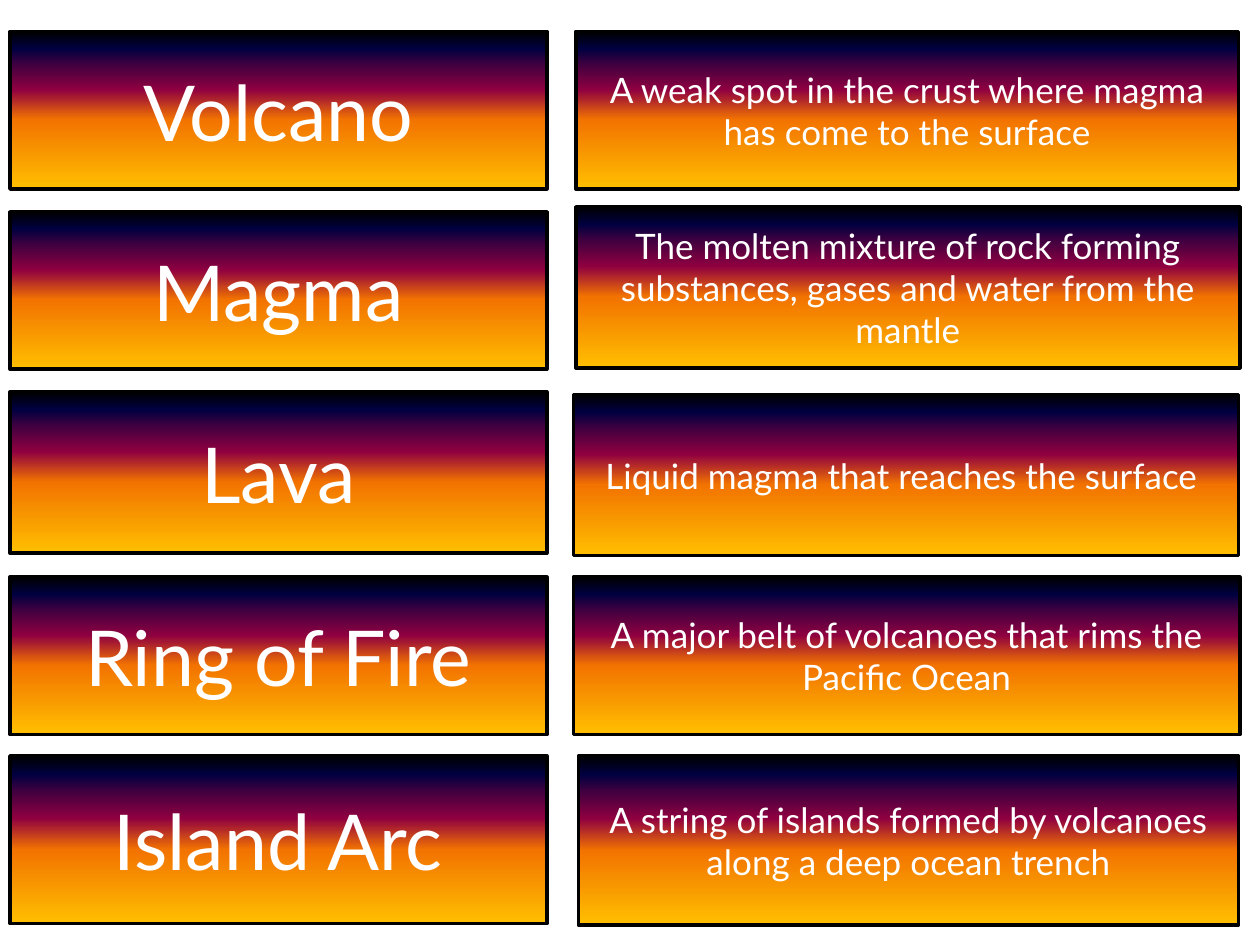
from dataclasses import dataclass

import lxml.etree
import pptx
import pptx.dml.color
import pptx.enum.shapes
import pptx.enum.text
import pptx.oxml.ns
import pptx.util

Inches = pptx.util.Inches
RGBColor = pptx.dml.color.RGBColor
qn = pptx.oxml.ns.qn

BLACK = RGBColor(0x00, 0x00, 0x00)
WHITE = RGBColor(0xFF, 0xFF, 0xFF)
SUNSET = [
    (0, BLACK),
    (11, RGBColor(0x00, 0x00, 0x40)),
    (21, RGBColor(0x40, 0x00, 0x40)),
    (37, RGBColor(0x8F, 0x00, 0x40)),
    (56, RGBColor(0xF2, 0x73, 0x00)),
    (100, RGBColor(0xFF, 0xBF, 0x00)),
]
FONT = "Lato"
TERM_LEFT, TERM_WIDTH = 0.08, 4.26


@dataclass
class Box:
    left: float
    top: float
    width: float
    height: float


@dataclass
class Entry:
    term: str
    top: float
    height: float
    meaning: str
    box: Box


ENTRIES = [
    Entry("Volcano", 0.25, 1.25,
          "A weak spot in the crust where magma has come to the surface",
          Box(4.57, 0.25, 5.26, 1.25)),
    Entry("Magma", 1.68, 1.25,
          "The molten mixture of rock forming substances, gases and water from the mantle",
          Box(4.57, 1.64, 5.27, 1.28)),
    Entry("Lava", 3.11, 1.28,
          "Liquid magma that reaches the surface ",
          Box(4.55, 3.13, 5.28, 1.28)),
    Entry("Ring of Fire", 4.58, 1.25,
          "A major belt of volcanoes that rims the Pacific Ocean",
          Box(4.55, 4.58, 5.29, 1.25)),
    Entry("Island Arc", 6, 1.33,
          "A string of islands formed by volcanoes along a deep ocean trench",
          Box(4.59, 6, 5.24, 1.34)),
]


def fill_sunset(shape) -> None:
    """Fill the shape with the sunset stops, running from top to bottom."""
    shape.fill.gradient()
    shape.fill.gradient_angle = 270
    stops = shape.element.spPr.find(".//" + qn("a:gsLst"))
    for stop in list(stops):
        stops.remove(stop)
    for place, color in SUNSET:
        stop = lxml.etree.SubElement(stops, qn("a:gs"), pos=str(place * 1000))
        lxml.etree.SubElement(stop, qn("a:srgbClr"), val=str(color))


def write(shape, text: str, *, size: float, color: RGBColor = WHITE) -> None:
    frame = shape.text_frame
    frame.word_wrap = True
    frame.vertical_anchor = pptx.enum.text.MSO_ANCHOR.MIDDLE
    para = frame.paragraphs[0]
    para.alignment = pptx.enum.text.PP_ALIGN.CENTER
    run = para.add_run()
    run.text = text
    run.font.name = FONT
    run.font.size = pptx.util.Pt(size)
    run.font.color.rgb = color


def draw_card(slide, box: Box, text: str, size: float) -> None:
    shape = slide.shapes.add_shape(
        pptx.enum.shapes.MSO_SHAPE.FLOWCHART_PROCESS,
        Inches(box.left), Inches(box.top), Inches(box.width), Inches(box.height))
    shape.shadow.inherit = False
    fill_sunset(shape)
    shape.line.color.rgb = BLACK
    shape.line.width = pptx.util.Pt(2)
    write(shape, text, size=size)


def main() -> None:
    deck = pptx.Presentation()
    deck.slide_width, deck.slide_height = Inches(10), Inches(7.5)
    slide = deck.slides.add_slide(deck.slide_layouts[6])
    for entry in ENTRIES:
        term = Box(TERM_LEFT, entry.top, TERM_WIDTH, entry.height)
        draw_card(slide, term, entry.term, 44)
        draw_card(slide, entry.box, entry.meaning, 20)
    deck.save("out.pptx")


if __name__ == "__main__":
    main()
